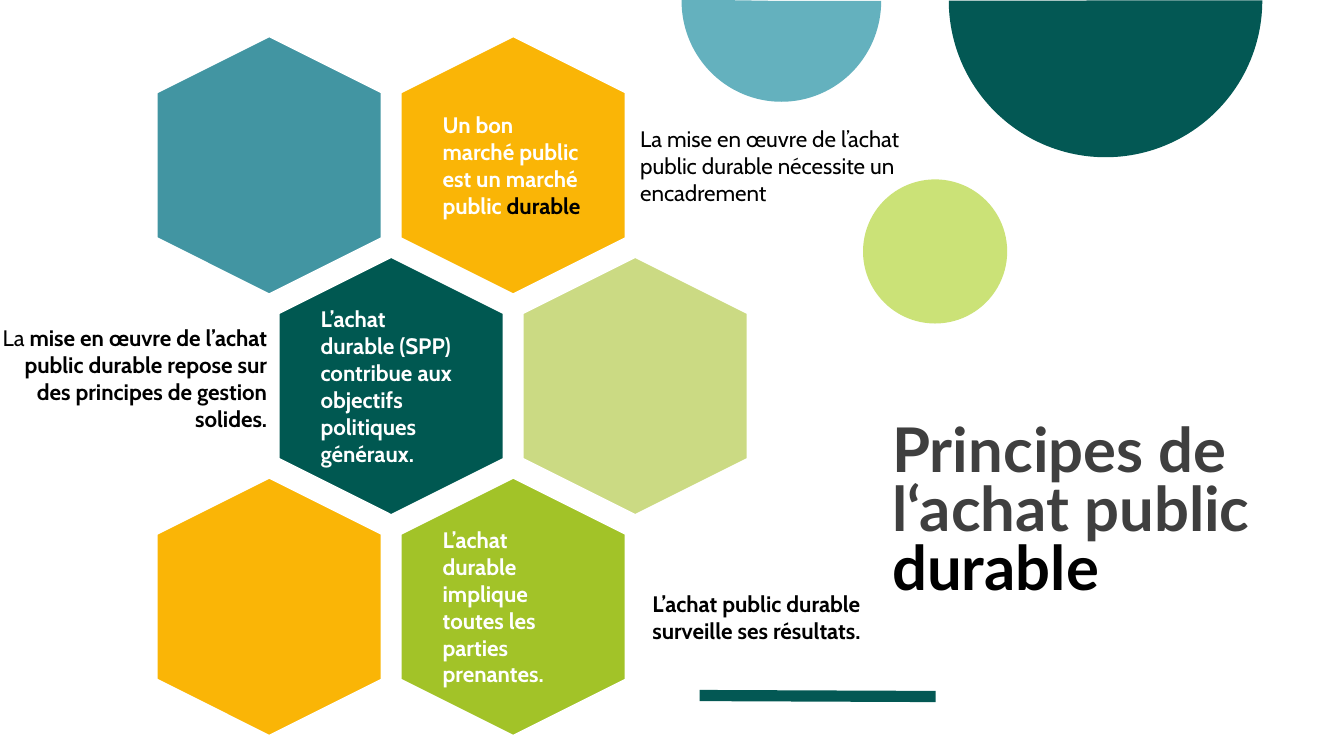
import pptx
import pptx.dml.color
import pptx.enum.shapes
import pptx.enum.text
import pptx.oxml
import pptx.oxml.ns
import pptx.util

Inches = pptx.util.Inches
Pt = pptx.util.Pt
RGBColor = pptx.dml.color.RGBColor
SHAPE = pptx.enum.shapes.MSO_SHAPE
ANCHOR = pptx.enum.text.MSO_ANCHOR
ALIGN = pptx.enum.text.PP_ALIGN

WHITE = RGBColor(0xFF, 0xFF, 0xFF)
BLACK = RGBColor(0x00, 0x00, 0x00)
GREY = RGBColor(0x3F, 0x3F, 0x3F)
DARK_GREEN = RGBColor(0x03, 0x58, 0x54)
DEEP_GREEN = RGBColor(0x00, 0x58, 0x51)
LIGHT_BLUE = RGBColor(0x64, 0xB1, 0xBE)
BLUE = RGBColor(0x42, 0x95, 0xA2)
LIME = RGBColor(0xCB, 0xE2, 0x77)
PALE_GREEN = RGBColor(0xCB, 0xDA, 0x83)
GREEN = RGBColor(0xA2, 0xC3, 0x28)
ORANGE = RGBColor(0xFA, 0xB5, 0x06)

# Honeycomb, in inches: centre of the top left cell and distances between cells
FIRST_X, FIRST_Y = 2.67, 1.64
COLUMN_STEP, ROW_STEP = 2.42, 2.19
HEXAGON_WIDTH, HEXAGON_HEIGHT = 2.57, 2.24
LABEL_WIDTH, LABEL_HEIGHT = 1.54, 1.77

# Row, column, fill, label runs as (text, colour, bold)
CELLS = [
    (0, 0, BLUE, []),
    (0, 1, ORANGE, [("Un bon marché public est un marché public ", WHITE, True),
                    ("durable", BLACK, True)]),
    (1, 0, DEEP_GREEN, [("L’achat durable (SPP) contribue aux objectifs "
                         "politiques généraux.", WHITE, True)]),
    (1, 1, PALE_GREEN, []),
    (2, 0, ORANGE, []),
    (2, 1, GREEN, [("L’achat durable implique toutes les parties prenantes.",
                    WHITE, True)]),
]

# Left, top, width, alignment, runs
SIDE_NOTES = [
    (6.28, 0.87, 2.87, ALIGN.LEFT,
     [("La mise en œuvre de l’achat public durable nécessite un encadrement",
       BLACK, False)]),
    (-0.06, 2.98, 2.78, ALIGN.RIGHT,
     [("La ", BLACK, False),
      ("mise en œuvre de l’achat public durable repose sur des principes "
       "de gestion solides.", BLACK, True)]),
    (6.4, 5.35, 2.87, ALIGN.LEFT,
     [("L’achat public durable surveille ses résultats.", BLACK, True)]),
]
NOTE_HEIGHT = 1.54


def add_filled_shape(slide, kind, left, top, width, height, color):
    shape = slide.shapes.add_shape(
        kind, Inches(left), Inches(top), Inches(width), Inches(height))
    shape.shadow.inherit = False
    shape.fill.solid()
    shape.fill.fore_color.rgb = color
    shape.line.fill.background()
    return shape


def add_half_disc(slide, left, top, width, height, end_angle, color):
    """Add the lower half of a disc; the angle is in 100000 / 60000 degrees."""
    disc = add_filled_shape(slide, SHAPE.PIE, left, top, width, height, color)
    disc.adjustments[0] = 0
    disc.adjustments[1] = end_angle


def add_text(slide, left, top, width, height, runs, font="Cabin", size=16,
             anchor=ANCHOR.MIDDLE, align=ALIGN.LEFT, inset=0.07, spacing=None):
    box = slide.shapes.add_textbox(
        Inches(left), Inches(top), Inches(width), Inches(height))
    frame = box.text_frame
    frame.word_wrap = True
    frame.vertical_anchor = anchor
    frame.margin_left = frame.margin_right = Inches(inset)
    frame.margin_top = frame.margin_bottom = Inches(inset)
    para = frame.paragraphs[0]
    para.alignment = align
    para.line_spacing = spacing
    for text, color, bold in runs:
        span = para.add_run()
        span.text = text
        span.font.name = font
        span.font.size = Pt(size)
        span.font.bold = bold
        span.font.color.rgb = color


def add_cell(slide, row, column, color, runs):
    """Add one hexagon of the honeycomb; odd rows shift by half a column."""
    center_x = FIRST_X + (column + row % 2 / 2) * COLUMN_STEP
    center_y = FIRST_Y + row * ROW_STEP
    hexagon = add_filled_shape(
        slide, SHAPE.HEXAGON, center_x - HEXAGON_WIDTH / 2,
        center_y - HEXAGON_HEIGHT / 2, HEXAGON_WIDTH, HEXAGON_HEIGHT, color)
    hexagon.rotation = 90
    hexagon.line.color.rgb = WHITE
    hexagon.line.width = Pt(2)
    if runs:
        add_text(slide, center_x - LABEL_WIDTH / 2, center_y - LABEL_HEIGHT / 2,
                 LABEL_WIDTH, LABEL_HEIGHT, runs)


def add_rule(slide, start_x, start_y, end_x, end_y, color, width):
    rule = slide.shapes.add_connector(
        pptx.enum.shapes.MSO_CONNECTOR.STRAIGHT, Inches(start_x),
        Inches(start_y), Inches(end_x), Inches(end_y))
    rule.line.color.rgb = color
    rule.line.width = Pt(width)
    properties = rule._element.spPr
    properties.append(pptx.oxml.parse_xml(
        "<a:effectLst %s/>" % pptx.oxml.ns.nsdecls("a")))


def main():
    deck = pptx.Presentation()
    deck.slide_width = Inches(13.33)
    deck.slide_height = Inches(7.5)
    page = deck.slides.add_slide(deck.slide_layouts[6])

    add_rule(page, 6.94, 6.9, 9.28, 6.91, DARK_GREEN, 8)
    add_half_disc(page, 9.41, -1.55, 3.11, 3.11, 107.96, DARK_GREEN)
    add_half_disc(page, 6.76, -0.99, 1.98, 2, 108.52, LIGHT_BLUE)
    add_filled_shape(page, SHAPE.OVAL, 8.56, 1.78, 1.43, 1.43, LIME)
    add_text(page, 8.85, 2.9, 4.49, 3.08,
             [("Principes de l‘achat public ", GREY, True),
              ("durable", BLACK, True)],
             font="Lato", size=44, anchor=ANCHOR.BOTTOM, inset=0, spacing=0.8)
    for cell in CELLS:
        add_cell(page, *cell)
    for left, top, width, align, runs in SIDE_NOTES:
        add_text(page, left, top, width, NOTE_HEIGHT, runs, align=align)

    deck.save("out.pptx")


if __name__ == "__main__":
    main()
